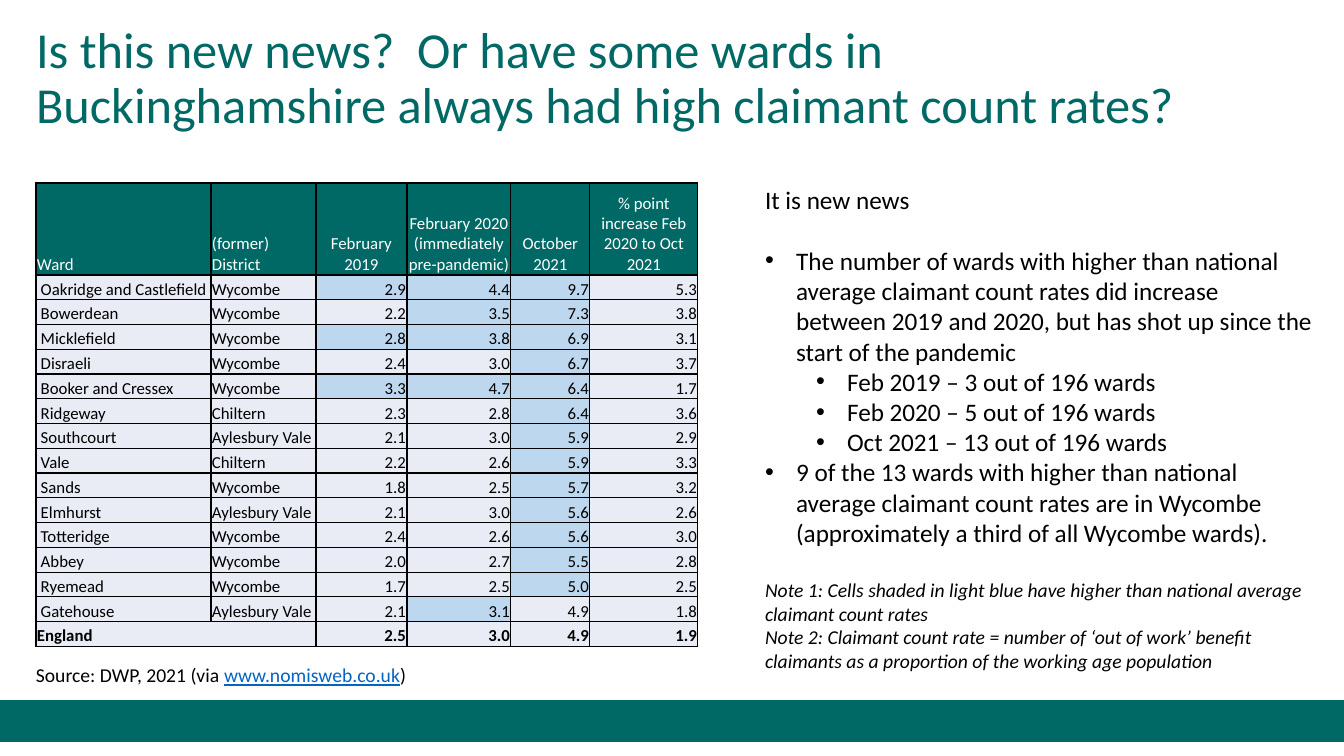
import dataclasses

import lxml.etree
import pptx
import pptx.dml.color
import pptx.enum.shapes
import pptx.enum.text
import pptx.oxml.ns
import pptx.util

TITLE = "Is this new news?  Or have some wards in Buckinghamshire always had high claimant count rates?"
HEADERS = [
    "Ward",
    "(former) District",
    "February 2019",
    "February 2020 (immediately pre-pandemic)",
    "October 2021",
    "% point increase Feb 2020 to Oct 2021",
]
WARDS = [
    ("Oakridge and Castlefield", "Wycombe", 2.9, 4.4, 9.7, 5.3),
    ("Bowerdean", "Wycombe", 2.2, 3.5, 7.3, 3.8),
    ("Micklefield", "Wycombe", 2.8, 3.8, 6.9, 3.1),
    ("Disraeli", "Wycombe", 2.4, 3.0, 6.7, 3.7),
    ("Booker and Cressex", "Wycombe", 3.3, 4.7, 6.4, 1.7),
    ("Ridgeway", "Chiltern", 2.3, 2.8, 6.4, 3.6),
    ("Southcourt", "Aylesbury Vale", 2.1, 3.0, 5.9, 2.9),
    ("Vale", "Chiltern", 2.2, 2.6, 5.9, 3.3),
    ("Sands", "Wycombe", 1.8, 2.5, 5.7, 3.2),
    ("Elmhurst", "Aylesbury Vale", 2.1, 3.0, 5.6, 2.6),
    ("Totteridge", "Wycombe", 2.4, 2.6, 5.6, 3.0),
    ("Abbey", "Wycombe", 2.0, 2.7, 5.5, 2.8),
    ("Ryemead", "Wycombe", 1.7, 2.5, 5.0, 2.5),
    ("Gatehouse", "Aylesbury Vale", 2.1, 3.1, 4.9, 1.8),
]
ENGLAND = ("England", "", 2.5, 3.0, 4.9, 1.9)
RATE_COLUMNS = (2, 3, 4)
COMMENTARY = [
    ("lead", "It is new news"),
    ("bullet", "The number of wards with higher than national average claimant count rates did increase between 2019 and 2020, but has shot up since the start of the pandemic"),
    ("sub", "Feb 2019 – 3 out of 196 wards"),
    ("sub", "Feb 2020 – 5 out of 196 wards"),
    ("sub", "Oct 2021 – 13 out of 196 wards"),
    ("bullet", "9 of the 13 wards with higher than national average claimant count rates are in Wycombe (approximately a third of all Wycombe wards)."),
    ("note", "Note 1: Cells shaded in light blue have higher than national average claimant count rates"),
    ("note", "Note 2: Claimant count rate = number of ‘out of work’ benefit claimants as a proportion of the working age population"),
]
SOURCE = ["Source: DWP, 2021 (via ", "www.nomisweb.co.uk", ")"]

TITLE_BOX = (26, 46, 1159, 67)
TABLE_BOX = (36, 183, 662, 464)
BODY_BOX = (755, 179, 569, 526)
SOURCE_BOX = (26, 658, 623, 34)
FOOTER_BOX = (0, 701, 1344, 40)
COLUMN_WIDTHS = [175, 105, 91, 104, 79, 108]
HEADER_HEIGHT = 92
MARGINS = {"lead": 0, "bullet": 31, "sub": 82, "note": 0}
HANGING = 31


@dataclasses.dataclass(frozen=True)
class Theme:
    font: str = "Calibri"
    teal: str = "006965"
    white: str = "FFFFFF"
    black: str = "000000"
    pale: str = "E9EBF5"
    blue: str = "BDD7EE"
    link: str = "0563C1"
    title: int = 36
    body: int = 18
    note: int = 14
    cell: int = 12
    gap: int = 22


T = Theme()
ALIGN = pptx.enum.text.PP_ALIGN
ANCHOR = pptx.enum.text.MSO_ANCHOR


def px(n):
    return round(n * 914400 / 100.8)


def rgb(color):
    return pptx.dml.color.RGBColor.from_string(color)


def style(p, size, color, bold=False, italic=False):
    for r in p.runs:
        r.font.name = T.font
        r.font.size = pptx.util.Pt(size)
        r.font.bold = bold
        r.font.italic = italic
        r.font.color.rgb = rgb(color)


def place(sp, box):
    sp.left, sp.top, sp.width, sp.height = map(px, box)


def sub(parent, tag, **attrs):
    return lxml.etree.SubElement(parent, pptx.oxml.ns.qn(tag), attrs)


def set_bullet(p, kind):
    pPr = p._p.get_or_add_pPr()
    pPr.set("marL", str(px(MARGINS[kind])))
    if kind in ("bullet", "sub"):
        pPr.set("indent", str(-px(HANGING)))
        sub(pPr, "a:buFont", typeface="Arial")
        sub(pPr, "a:buChar", char="•")
    else:
        pPr.set("indent", "0")
        sub(pPr, "a:buNone")


def fill_cell(cell, text, align, color, fill, bold):
    tcPr = cell._tc.get_or_add_tcPr()
    for side in ("a:lnL", "a:lnR", "a:lnT", "a:lnB"):
        ln = sub(tcPr, side, w=str(pptx.util.Pt(1)))
        sub(sub(ln, "a:solidFill"), "a:srgbClr", val=T.black)
    cell.fill.solid()
    cell.fill.fore_color.rgb = rgb(fill)
    cell.margin_left = cell.margin_right = cell.margin_top = px(1)
    cell.margin_bottom = 0
    cell.vertical_anchor = ANCHOR.BOTTOM
    p = cell.text_frame.paragraphs[0]
    p.text = text
    p.alignment = align
    style(p, T.cell, color, bold)


def add_title(slide):
    sp = slide.shapes.title
    place(sp, TITLE_BOX)
    tf = sp.text_frame
    tf.text = TITLE
    tf.auto_size = pptx.enum.text.MSO_AUTO_SIZE.NONE
    tf.vertical_anchor = ANCHOR.MIDDLE
    p = tf.paragraphs[0]
    p.alignment = ALIGN.LEFT
    p.line_spacing = 0.9
    style(p, T.title, T.teal)


def add_ward_table(slide):
    rows = [HEADERS, *WARDS, ENGLAND]
    last = len(rows) - 1
    table = slide.shapes.add_table(len(rows), len(HEADERS), *map(px, TABLE_BOX)).table
    table.horz_banding = False
    for column, width in zip(table.columns, COLUMN_WIDTHS):
        column.width = px(width)
    for i, row in enumerate(table.rows):
        row.height = px((TABLE_BOX[3] - HEADER_HEIGHT) / last if i else HEADER_HEIGHT)
    for i, values in enumerate(rows):
        for j, value in enumerate(values):
            align, color, fill = ALIGN.LEFT, T.black, T.pale
            text = value
            if i == 0:
                align = ALIGN.CENTER if j > 1 else ALIGN.LEFT
                color, fill = T.white, T.teal
            elif j > 1:
                text = f"{value:.1f}"
                align = ALIGN.RIGHT
                if j in RATE_COLUMNS and value > ENGLAND[j]:
                    fill = T.blue
            elif j == 0 and i < last:
                text = f" {value}"
            fill_cell(table.cell(i, j), text, align, color, fill, i == last)
    table.cell(last, 0).merge(table.cell(last, 1))


def add_commentary(slide):
    sp = slide.placeholders[1]
    place(sp, BODY_BOX)
    tf = sp.text_frame
    tf.text = "\n".join(text for _, text in COMMENTARY)
    tf.auto_size = pptx.enum.text.MSO_AUTO_SIZE.NONE
    previous = "lead"
    for p, (kind, _) in zip(tf.paragraphs, COMMENTARY):
        p.level = 1 if kind == "sub" else 0
        starts_block = (previous, kind) in (("lead", "bullet"), ("bullet", "note"))
        p.space_before = pptx.util.Pt(T.gap if starts_block else 0)
        set_bullet(p, kind)
        note = kind == "note"
        style(p, T.note if note else T.body, T.black, italic=note)
        previous = kind


def add_source(slide):
    tf = slide.shapes.add_textbox(*map(px, SOURCE_BOX)).text_frame
    tf.word_wrap = True
    p = tf.paragraphs[0]
    for text in SOURCE:
        p.add_run().text = text
    style(p, T.note, T.black)
    address = p.runs[1].font
    address.color.rgb = rgb(T.link)
    address.underline = True


def add_footer_band(slide):
    sp = slide.shapes.add_shape(pptx.enum.shapes.MSO_SHAPE.RECTANGLE, *map(px, FOOTER_BOX))
    sp.shadow.inherit = False
    sp.fill.solid()
    sp.fill.fore_color.rgb = rgb(T.teal)
    sp.line.color.rgb = rgb(T.teal)
    sp.line.width = pptx.util.Pt(1)


def main():
    prs = pptx.Presentation()
    prs.slide_width, prs.slide_height = px(1344), px(756)
    slide = prs.slides.add_slide(prs.slide_layouts[1])
    for add_part in (add_footer_band, add_title, add_ward_table, add_commentary, add_source):
        add_part(slide)
    prs.save("out.pptx")


if __name__ == "__main__":
    main()
